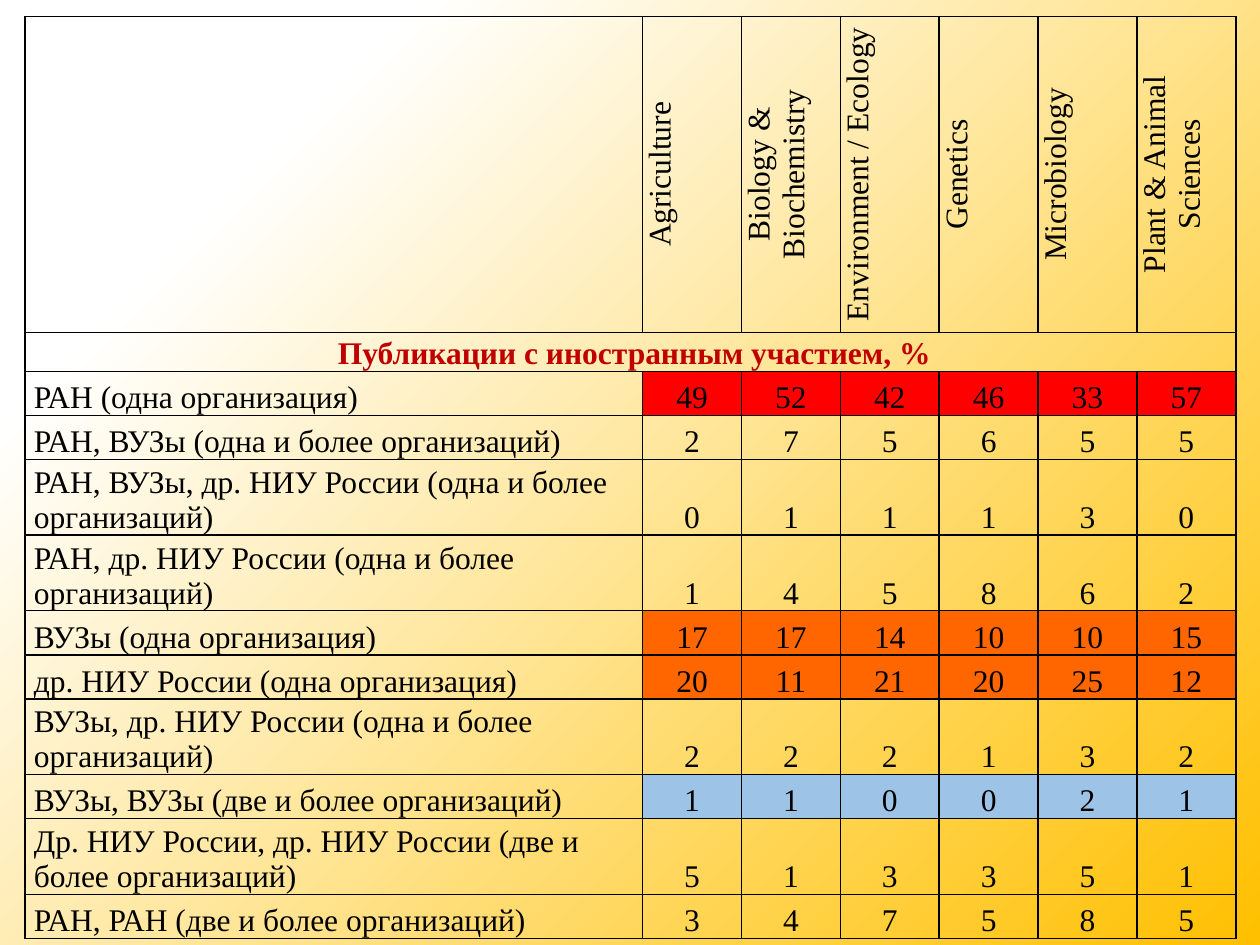
from lxml.etree import SubElement
from pptx import Presentation
from pptx.dml.color import RGBColor
from pptx.enum.text import MSO_ANCHOR, PP_ALIGN
from pptx.oxml import parse_xml
from pptx.oxml.ns import nsdecls, qn
from pptx.util import Inches, Pt

BLACK = RGBColor(0x00, 0x00, 0x00)
DARK_RED = RGBColor(0xC0, 0x00, 0x00)
RED = RGBColor(0xFF, 0x00, 0x00)
ORANGE = RGBColor(0xFF, 0x66, 0x00)
BLUE = RGBColor(0x9D, 0xC3, 0xE6)
WHITE = RGBColor(0xFF, 0xFF, 0xFF)
GOLD = RGBColor(0xFF, 0xC0, 0x00)

FONT = "Times New Roman"
FIELDS = ["Agriculture", "Biology & Biochemistry", "Environment / Ecology",
          "Genetics", "Microbiology", "Plant & Animal Sciences"]
SECTION = "Публикации с иностранным участием, %"

# Label, percentages by field, highlight, row height in inches
PUBLICATIONS = [
    ("РАН (одна организация)", [49, 52, 42, 46, 33, 57], RED, 0.35),
    ("РАН, ВУЗы (одна и более организаций)", [2, 7, 5, 6, 5, 5], None, 0.35),
    ("РАН, ВУЗы, др. НИУ России (одна и более организаций)", [0, 1, 1, 1, 3, 0], None, 0.6),
    ("РАН, др. НИУ России (одна и более организаций)", [1, 4, 5, 8, 6, 2], None, 0.6),
    ("ВУЗы (одна организация)", [17, 17, 14, 10, 10, 15], ORANGE, 0.35),
    ("др. НИУ России (одна организация)", [20, 11, 21, 20, 25, 12], ORANGE, 0.35),
    ("ВУЗы, др. НИУ России (одна и более организаций)", [2, 2, 2, 1, 3, 2], None, 0.6),
    ("ВУЗы, ВУЗы (две и более организаций)", [1, 1, 0, 0, 2, 1], BLUE, 0.35),
    ("Др. НИУ России, др. НИУ России (две и более организаций)", [5, 1, 3, 3, 5, 1], None, 0.6),
    ("РАН, РАН (две и более организаций)", [3, 4, 7, 5, 8, 5], None, 0.35),
]


def paint_background(slide):
    """Radial gradient spreading from the top left corner."""
    stops = "".join(
        f'<a:gs pos="{position * 1000}"><a:srgbClr val="{color}"/></a:gs>'
        for position, color in [(0, WHITE), (19, WHITE), (100, GOLD)])
    background = parse_xml(
        f'<p:bg {nsdecls("p", "a")}><p:bgPr><a:gradFill rotWithShape="1">'
        f'<a:gsLst>{stops}</a:gsLst>'
        '<a:path path="circle"><a:fillToRect r="100000" b="100000"/></a:path>'
        '</a:gradFill><a:effectLst/></p:bgPr></p:bg>')
    slide.element.cSld.insert(0, background)


def style_cell(cell, fill=None):
    """Black 1 pt border on every side, with an optional highlight."""
    properties = cell._tc.get_or_add_tcPr()
    for side in ("lnL", "lnR", "lnT", "lnB"):
        line = SubElement(properties, qn(f"a:{side}"), w=str(Pt(1)))
        line_fill = SubElement(line, qn("a:solidFill"))
        SubElement(line_fill, qn("a:srgbClr"), val=str(BLACK))
    if fill is None:
        cell.fill.background()
    else:
        cell.fill.solid()
        cell.fill.fore_color.rgb = fill


def add_run(paragraph, text, color=BLACK, bold=False):
    run = paragraph.add_run()
    run.text = text
    run.font.name = FONT
    run.font.size = Pt(18)
    run.font.bold = bold
    run.font.color.rgb = color


def write_cell(cell, text, alignment=PP_ALIGN.CENTER, anchor=MSO_ANCHOR.BOTTOM):
    cell.margin_left = cell.margin_right = Inches(0.07)
    cell.margin_top = cell.margin_bottom = 0
    cell.vertical_anchor = anchor
    paragraph = cell.text_frame.paragraphs[0]
    paragraph.alignment = alignment
    add_run(paragraph, text)
    return paragraph


def add_publication_table(slide, left, top, width, height):
    column_count = len(FIELDS) + 1
    table = slide.shapes.add_table(
        len(PUBLICATIONS) + 2, column_count, left, top, width, height).table
    table.first_row = table.horz_banding = False

    # Column widths and row heights
    label_width = Inches(4.9)
    for index, column in enumerate(table.columns):
        column.width = (width - label_width) // len(FIELDS) if index else label_width
    row_heights = [1.86, 0.31] + [entry[3] for entry in PUBLICATIONS]
    for row, row_height in zip(table.rows, row_heights):
        row.height = Inches(row_height)

    # Rotated field names
    style_cell(table.cell(0, 0))
    for column, field in enumerate(FIELDS, start=1):
        cell = table.cell(0, column)
        write_cell(cell, field, anchor=MSO_ANCHOR.MIDDLE)
        cell._tc.get_or_add_tcPr().set("vert", "vert270")
        style_cell(cell)

    # Section heading across the table
    heading = table.cell(1, 0)
    heading.merge(table.cell(1, column_count - 1))
    add_run(write_cell(heading, " "), SECTION, DARK_RED, bold=True)
    for column in range(column_count):
        style_cell(table.cell(1, column))

    # Percentages by kind of organization
    for row, (label, values, highlight, _) in enumerate(PUBLICATIONS, start=2):
        write_cell(table.cell(row, 0), label, PP_ALIGN.LEFT)
        style_cell(table.cell(row, 0))
        for column, value in enumerate(values, start=1):
            write_cell(table.cell(row, column), str(value))
            style_cell(table.cell(row, column), highlight)


def main():
    presentation = Presentation()
    presentation.slide_width = Inches(10)
    presentation.slide_height = Inches(7.5)
    slide = presentation.slides.add_slide(presentation.slide_layouts[6])
    paint_background(slide)
    add_publication_table(slide, Inches(0.2), Inches(0.13), Inches(9.61), Inches(6.67))
    presentation.save("out.pptx")


if __name__ == "__main__":
    main()
